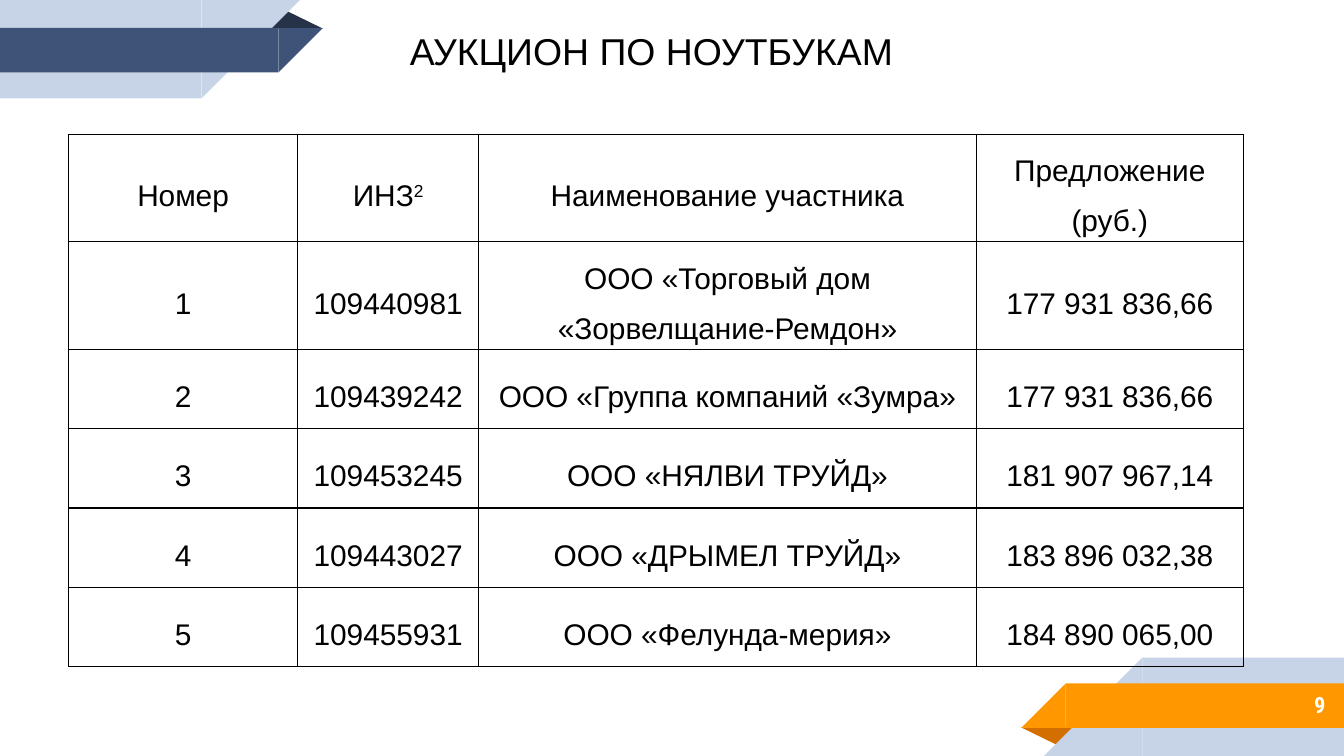
from lxml import etree
from pptx import Presentation
from pptx.dml.color import RGBColor
from pptx.enum.shapes import MSO_SHAPE
from pptx.enum.text import MSO_ANCHOR, PP_ALIGN
from pptx.oxml.ns import qn
from pptx.util import Cm, Pt

RECT, RIGHT, TRI = MSO_SHAPE.RECTANGLE, MSO_SHAPE.RIGHT_TRIANGLE, MSO_SHAPE.ISOSCELES_TRIANGLE
TOP, MIDDLE = MSO_ANCHOR.TOP, MSO_ANCHOR.MIDDLE
LEFT, CENTER, END = PP_ALIGN.LEFT, PP_ALIGN.CENTER, PP_ALIGN.RIGHT

# Content
TITLE = "АУКЦИОН ПО НОУТБУКАМ"
PAGE = "9"
HEAD = ("Номер", "ИНЗ", "Наименование участника", "Предложение (руб.)")
NOTE = "2"  # superscript after the second heading
BIDS = [
    ("109440981", "ООО «Торговый дом «Зорвелщание-Ремдон»", "177 931 836,66"),
    ("109439242", "ООО «Группа компаний «Зумра»", "177 931 836,66"),
    ("109453245", "ООО «НЯЛВИ ТРУЙД»", "181 907 967,14"),
    ("109443027", "ООО «ДРЫМЕЛ ТРУЙД»", "183 896 032,38"),
    ("109455931", "ООО «Фелунда-мерия»", "184 890 065,00"),
]

# Theme
THEME = {
    "pale": "C7D3E6", "navy": "3F5378", "dark": "263248",
    "orange": "FF9800", "rust": "D26F00", "line": "000000",
    "title": {"name": "Arial", "size": Pt(20), "bold": False, "color": "000000"},
    "cell": {"name": "Arial", "size": Pt(16), "bold": False, "color": "000000"},
    "page": {"name": "Roboto Condensed", "size": Pt(12), "bold": True, "color": "FFFFFF"},
}

# Layout in centimetres
WIDE, HIGH = 25.4, 14.29
COLS, ROW = (4.32, 3.43, 9.4, 5.05), 1.5
# Ribbon at the bottom right: shape, colour role, left, top, width, height
RIBBON = [
    (TRI, "fold", 19.3, 13.75, 1.09, 0.36),
    (RECT, "back", 21.59, 12.43, 3.81, 1.86),
    (RIGHT, "back", 19.73, 12.43, 1.86, 1.86),
    (RECT, "front", 20.14, 12.92, 5.26, 0.84),
    (RIGHT, "front", 19.3, 12.92, 0.84, 0.84),
]


def style(run, look):
    for key, value in look.items():
        if key == "color":
            run.font.color.rgb = RGBColor.from_string(value)
        else:
            setattr(run.font, key, value)


def write(frame, text, look, align, **form):
    for key, value in form.items():
        setattr(frame, key, value)
    para = frame.paragraphs[0]
    para.alignment = align
    run = para.add_run()
    run.text = text
    style(run, look)
    return para


def ribbon(slide, colors, turned):
    for kind, role, x, y, w, h in RIBBON:
        if turned:
            x, y = WIDE - x - w, HIGH - y - h
        part = slide.shapes.add_shape(kind, Cm(x), Cm(y), Cm(w), Cm(h))
        part.shadow.inherit = False
        part.fill.solid()
        part.fill.fore_color.rgb = RGBColor.from_string(THEME[colors[role]])
        part.line.fill.background()
        if kind == TRI:
            part.adjustments[0] = 0.324
            part.rotation = 0 if turned else 180
        elif kind == RIGHT:
            part.rotation = 180 if turned else 0
            part._element.spPr.xfrm.set("flipH", "1")


def border(cell):
    props = cell._tc.get_or_add_tcPr()
    for spot, side in enumerate(("lnL", "lnR", "lnT", "lnB")):
        line = etree.Element(qn("a:" + side), w=str(Pt(0.75)))
        fill = etree.SubElement(line, qn("a:solidFill"))
        etree.SubElement(fill, qn("a:srgbClr"), val=THEME["line"])
        props.insert(spot, line)


deck = Presentation()
deck.slide_width, deck.slide_height = Cm(WIDE), Cm(HIGH)
slide = deck.slides.add_slide(deck.slide_layouts[5])

# Corner ribbons
ribbon(slide, {"fold": "rust", "back": "pale", "front": "orange"}, False)
ribbon(slide, {"fold": "dark", "back": "pale", "front": "navy"}, True)

# Page number
page = slide.shapes.add_textbox(Cm(21.16), Cm(12.88), Cm(4.14), Cm(0.89))
write(page.text_frame, PAGE, THEME["page"], END, word_wrap=True, vertical_anchor=MIDDLE)

# Title
title = slide.shapes.title
title.left, title.top, title.width, title.height = Cm(7.49), Cm(0.41), Cm(9.78), Cm(1.12)
write(title.text_frame, TITLE, THEME["title"], LEFT, word_wrap=False, vertical_anchor=TOP)

# Table of bids
rows = [HEAD] + [(str(num), *bid) for num, bid in enumerate(BIDS, 1)]
table = slide.shapes.add_table(len(rows), len(COLS), Cm(1.3), Cm(2.54),
                               Cm(sum(COLS)), Cm(ROW * len(rows))).table
table.first_row = table.horz_banding = False
for col, width in zip(table.columns, COLS):
    col.width = Cm(width)
for r, row in enumerate(rows):
    table.rows[r].height = Cm(ROW)
    for c, text in enumerate(row):
        cell = table.cell(r, c)
        cell.fill.background()
        cell.vertical_anchor = MIDDLE
        for side in ("left", "right", "top", "bottom"):
            setattr(cell, "margin_" + side, 0)
        border(cell)
        para = write(cell.text_frame, text, THEME["cell"], CENTER)
        para.line_spacing = 1.5

# Superscript mark in the heading
mark = table.cell(0, 1).text_frame.paragraphs[0].add_run()
mark.text = NOTE
style(mark, THEME["cell"])
mark.font._element.set("baseline", "30000")

deck.save("out.pptx")
